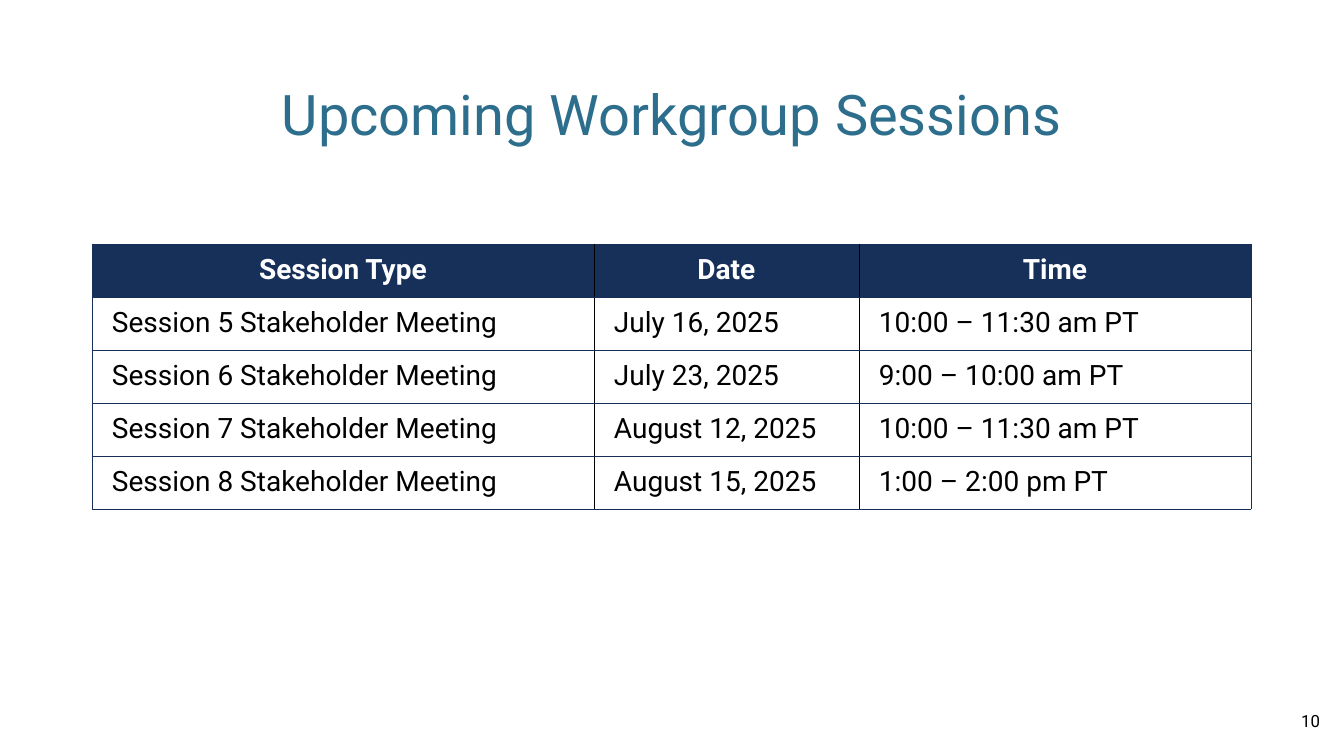
from lxml import etree
from pptx import Presentation
from pptx.dml.color import RGBColor
from pptx.enum.text import MSO_ANCHOR, PP_ALIGN
from pptx.oxml.ns import qn
from pptx.util import Pt

PX = 914400 / 100.8
FONT = "Roboto"
TEAL = RGBColor(0x2D, 0x6E, 0x8D)
NAVY = RGBColor(0x17, 0x30, 0x59)
BLACK = RGBColor(0, 0, 0)
WHITE = RGBColor(0xFF, 0xFF, 0xFF)
MIDDLE = MSO_ANCHOR.MIDDLE
LEFT, CENTER, RIGHT = PP_ALIGN.LEFT, PP_ALIGN.CENTER, PP_ALIGN.RIGHT

SESSIONS = [
    ("Session Type", "Date", "Time"),
    ("Session 5 Stakeholder Meeting", "July 16, 2025", "10:00 – 11:30 am PT"),
    ("Session 6 Stakeholder Meeting", "July 23, 2025", "9:00 – 10:00 am PT"),
    ("Session 7 Stakeholder Meeting", "August 12, 2025", "10:00 – 11:30 am PT"),
    ("Session 8 Stakeholder Meeting", "August 15, 2025", "1:00 – 2:00 pm PT"),
]
COLUMN_WIDTHS = (502, 265, 392)
ROW_HEIGHT = 53


def px(*lengths):
    return [round(length * PX) for length in lengths]


def write(frame, text, size, color, align, bold=False):
    frame.text = text
    frame.word_wrap = True
    paragraph = frame.paragraphs[0]
    paragraph.alignment = align
    font = paragraph.runs[0].font
    font.name, font.size, font.bold = FONT, Pt(size), bold
    font.color.rgb = color


prs = Presentation()
prs.slide_width, prs.slide_height = px(1344, 756)
slide = prs.slides.add_slide(prs.slide_layouts[5])

# Title
title = slide.shapes.title
title.left, title.top, title.width, title.height = px(92, 40, 1159, 146)
title.text_frame.vertical_anchor = MIDDLE
write(title.text_frame, "Upcoming Workgroup Sessions", 40, TEAL, CENTER)

# Session schedule
schedule = slide.shapes.add_table(
    len(SESSIONS), len(COLUMN_WIDTHS),
    *px(92, 244, sum(COLUMN_WIDTHS), ROW_HEIGHT * len(SESSIONS))).table
schedule.first_row = True
schedule.horz_banding = False
for column, width in zip(schedule.columns, px(*COLUMN_WIDTHS)):
    column.width = width

last_column = len(COLUMN_WIDTHS) - 1
for r, session in enumerate(SESSIONS):
    is_header = r == 0
    for c, text in enumerate(session):
        cell = schedule.cell(r, c)
        cell.margin_left, cell.margin_right = px(20, 20)
        cell.margin_top, cell.margin_bottom = px(10, 10)
        write(cell.text_frame, text, 20, WHITE if is_header else BLACK,
              CENTER if is_header else LEFT, bold=is_header)

        # Inner vertical rules are black, all other rules navy
        borders = {
            "a:lnL": NAVY if c == 0 else BLACK,
            "a:lnR": NAVY if c == last_column else BLACK,
            "a:lnT": NAVY,
            "a:lnB": NAVY,
        }
        properties = cell._tc.get_or_add_tcPr()
        for side, color in borders.items():
            line = etree.SubElement(properties, qn(side), w=str(Pt(0.5)))
            fill = etree.SubElement(line, qn("a:solidFill"))
            etree.SubElement(fill, qn("a:srgbClr"), val=str(color))

        if is_header:
            cell.fill.solid()
            cell.fill.fore_color.rgb = NAVY
        else:
            cell.fill.background()

# Slide number
page_number = slide.shapes.add_textbox(*px(1028, 701, 302, 40))
page_number.text_frame.vertical_anchor = MIDDLE
write(page_number.text_frame, "10", 12, BLACK, RIGHT)

prs.save("out.pptx")
